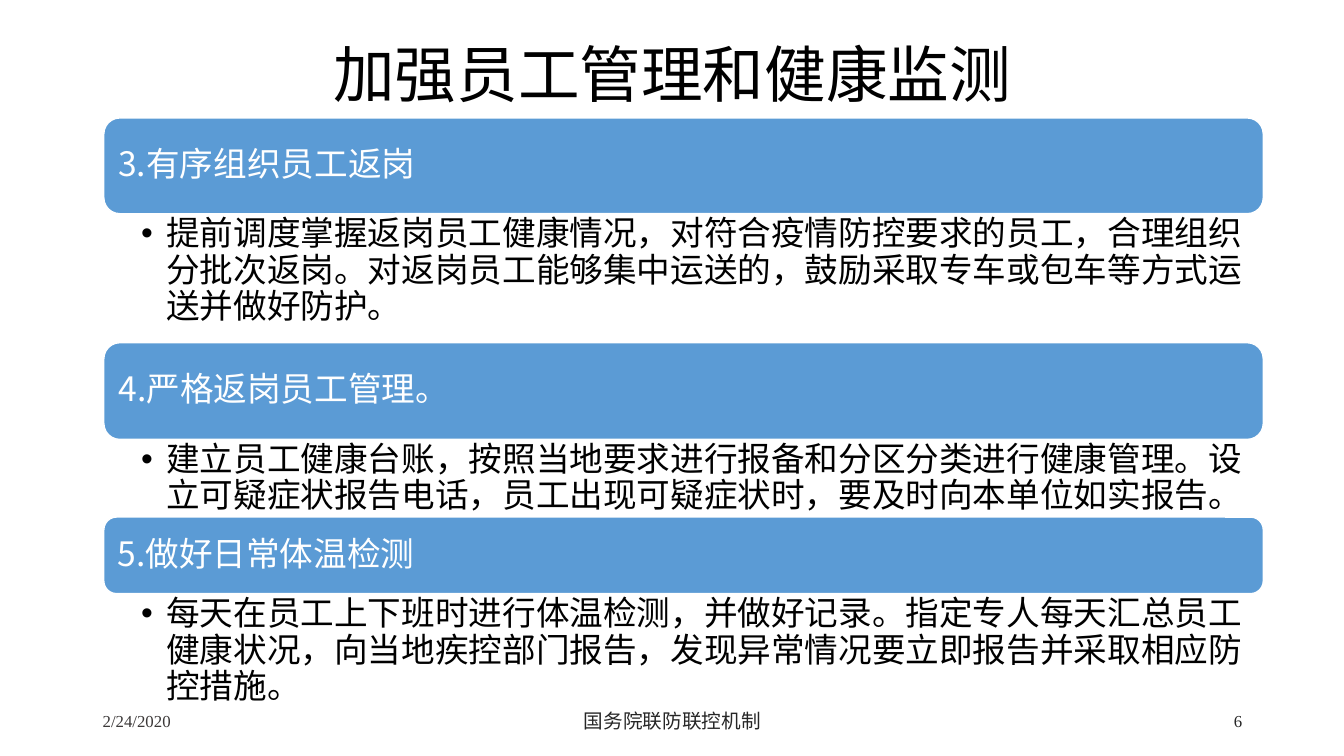
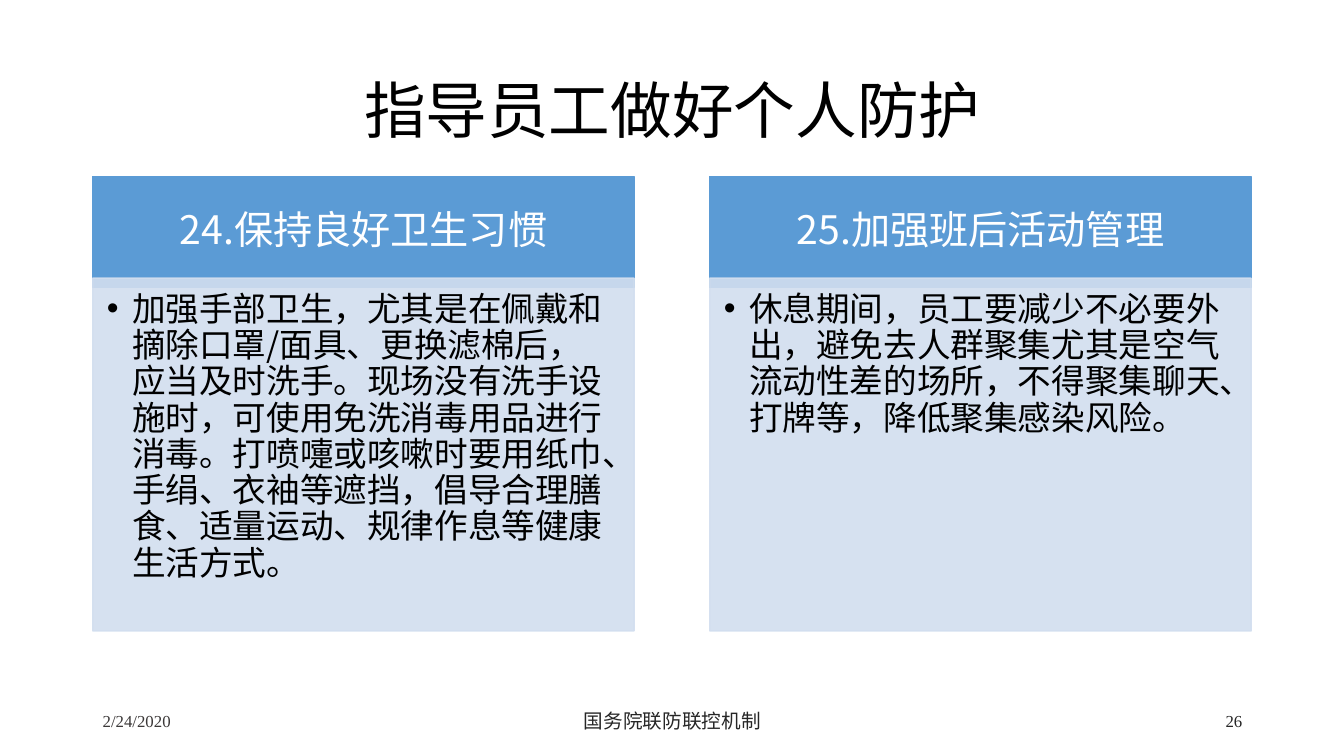
from dataclasses import dataclass

from lxml import etree
from pptx import Presentation
from pptx import util as u
from pptx.dml.color import RGBColor
from pptx.enum import lang, shapes, text
from pptx.oxml import ns


@dataclass(frozen=True)
class Theme:
    blue: RGBColor = RGBColor.from_string("5B9BD5")
    pale_blue: RGBColor = RGBColor.from_string("D2DEEF")
    white: RGBColor = RGBColor.from_string("FFFFFF")
    black: RGBColor = RGBColor.from_string("000000")
    date_gray: RGBColor = RGBColor.from_string("3B3838")
    footer_gray: RGBColor = RGBColor.from_string("262626")
    chinese: str = "Noto Sans CJK SC"
    serif: str = "Times New Roman"
    title_size: int = 44
    heading_size: int = 28
    body_size: int = 24
    footer_size: int = 14
    small_size: int = 12


theme = Theme()
LEFT, CENTER, RIGHT = text.PP_ALIGN.LEFT, text.PP_ALIGN.CENTER, text.PP_ALIGN.RIGHT
TOP, MIDDLE = text.MSO_ANCHOR.TOP, text.MSO_ANCHOR.MIDDLE


def text_style(size, color, name=theme.chinese, align=LEFT, anchor=MIDDLE,
               insets=(0.1, 0.05, 0.1, 0.05), spacing=0.9, bullet=False):
    sides = ("margin_left", "margin_top", "margin_right", "margin_bottom")
    return {
        "frame": {
            "word_wrap": True,
            "auto_size": text.MSO_AUTO_SIZE.NONE,
            "vertical_anchor": anchor,
            **{side: u.Inches(inset) for side, inset in zip(sides, insets)},
        },
        "paragraph": {"alignment": align, "line_spacing": spacing},
        "font": {
            "size": u.Pt(size),
            "name": name,
            "language_id": lang.MSO_LANGUAGE_ID.SIMPLIFIED_CHINESE,
        },
        "color": color,
        "bullet": bullet,
    }


def write_text(shape, content, style):
    frame = shape.text_frame
    frame.text = content
    paragraph = frame.paragraphs[0]
    run = paragraph.runs[0]
    for target, group in ((frame, "frame"), (paragraph, "paragraph"), (run.font, "font")):
        for attribute, value in style[group].items():
            setattr(target, attribute, value)
    run.font.color.rgb = style["color"]
    east_asian = etree.SubElement(run.font._element, ns.qn("a:ea"))
    east_asian.set("typeface", style["font"]["name"])
    if style["bullet"]:
        properties = paragraph._p.get_or_add_pPr()
        properties.set("marL", str(u.Inches(0.25)))
        properties.set("indent", str(-u.Inches(0.25)))
        etree.SubElement(properties, ns.qn("a:buFont")).set("typeface", "Arial")
        etree.SubElement(properties, ns.qn("a:buChar")).set("char", "•")


title_style = text_style(theme.title_size, theme.black, align=CENTER)
band_style = text_style(theme.body_size, theme.white, insets=(0.1, 0.1, 0.1, 0.1))
detail_style = text_style(theme.body_size, theme.black, anchor=TOP,
                          insets=(0.37, 0.03, 0.19, 0.03), bullet=True)
heading_style = text_style(theme.heading_size, theme.white, align=CENTER,
                           insets=(0.22, 0.12, 0.22, 0.12))
panel_style = text_style(theme.body_size, theme.black, anchor=TOP,
                         insets=(0.14, 0.14, 0.19, 0.21), bullet=True)
date_style = text_style(theme.small_size, theme.date_gray, theme.serif, spacing=1.0)
footer_style = text_style(theme.footer_size, theme.footer_gray, align=CENTER, spacing=1.0)
number_style = text_style(theme.small_size, theme.footer_gray, theme.serif, RIGHT, spacing=1.0)

band_left, band_width = 1.03, 11.5
bands = [
    (1.17, 0.95, 1.28, "3.有序组织员工返岗",
     "提前调度掌握返岗员工健康情况，对符合疫情防控要求的员工，合理组织分批次返岗。"
     "对返岗员工能够集中运送的，鼓励采取专车或包车等方式运送并做好防护。"),
    (3.4, 0.96, 0.77, "4.严格返岗员工管理。",
     "建立员工健康台账，按照当地要求进行报备和分区分类进行健康管理。"
     "设立可疑症状报告电话，员工出现可疑症状时，要及时向本单位如实报告。"),
    (5.13, 0.76, 1.27, "5.做好日常体温检测",
     "每天在员工上下班时进行体温检测，并做好记录。指定专人每天汇总员工健康状况，"
     "向当地疾控部门报告，发现异常情况要立即报告并采取相应防控措施。"),
]
column_left, column_width, column_step = 0.92, 5.37, 6.12
columns = [
    ("24.保持良好卫生习惯",
     "加强手部卫生，尤其是在佩戴和摘除口罩/面具、更换滤棉后，应当及时洗手。"
     "现场没有洗手设施时，可使用免洗消毒用品进行消毒。"
     "打喷嚏或咳嗽时要用纸巾、手绢、衣袖等遮挡，"
     "倡导合理膳食、适量运动、规律作息等健康生活方式。"),
    ("25.加强班后活动管理",
     "休息期间，员工要减少不必要外出，避免去人群聚集尤其是空气流动性差的场所，"
     "不得聚集聊天、打牌等，降低聚集感染风险。"),
]

round_box, box = shapes.MSO_SHAPE.ROUNDED_RECTANGLE, shapes.MSO_SHAPE.RECTANGLE
band_blocks = []
for top, height, detail_height, heading, detail in bands:
    band_blocks += [
        (round_box, (band_left, top, band_width, height),
         theme.blue, theme.white, 100, heading, band_style),
        (None, (band_left, top + height, band_width, detail_height),
         None, None, 100, detail, detail_style),
    ]
column_blocks = []
for index, (heading, detail) in enumerate(columns):
    left = column_left + index * column_step
    column_blocks += [
        (box, (left, 1.75, column_width, 1.1),
         theme.blue, theme.blue, 100, heading, heading_style),
        (box, (left, 2.76, column_width, 3.5),
         theme.pale_blue, theme.pale_blue, 90, detail, panel_style),
    ]

pages = [
    ("加强员工管理和健康监测", 0.04, "6", band_blocks),
    ("指导员工做好个人防护", 0.4, "26", column_blocks),
]

presentation = Presentation()
presentation.slide_width = u.Inches(13.33)
presentation.slide_height = u.Inches(7.5)

for title, title_top, number, blocks in pages:
    slide = presentation.slides.add_slide(presentation.slide_layouts[5])
    heading = slide.shapes.title
    heading.left, heading.top = u.Inches(0.92), u.Inches(title_top)
    heading.width, heading.height = u.Inches(11.5), u.Inches(1.45)
    write_text(heading, title, title_style)

    footers = [
        (None, (0.92, 6.95, 3, 0.4), None, None, 100, "2/24/2020", date_style),
        (None, (4.42, 6.95, 4.5, 0.4), None, None, 100, "国务院联防联控机制", footer_style),
        (None, (9.42, 6.95, 3, 0.4), None, None, 100, number, number_style),
    ]
    for preset, place, fill, line, opacity, content, style in blocks + footers:
        bounds = [u.Inches(length) for length in place]
        if preset is None:
            shape = slide.shapes.add_textbox(*bounds)
        else:
            shape = slide.shapes.add_shape(preset, *bounds)
            shape.shadow.inherit = False
            shape.fill.solid()
            shape.fill.fore_color.rgb = fill
            shape.line.color.rgb = line
            shape.line.width = u.Pt(1)
            if opacity < 100:
                for color in shape._element.spPr.iter(ns.qn("a:srgbClr")):
                    etree.SubElement(color, ns.qn("a:alpha")).set("val", str(opacity * 1000))
        write_text(shape, content, style)

presentation.save("out.pptx")
